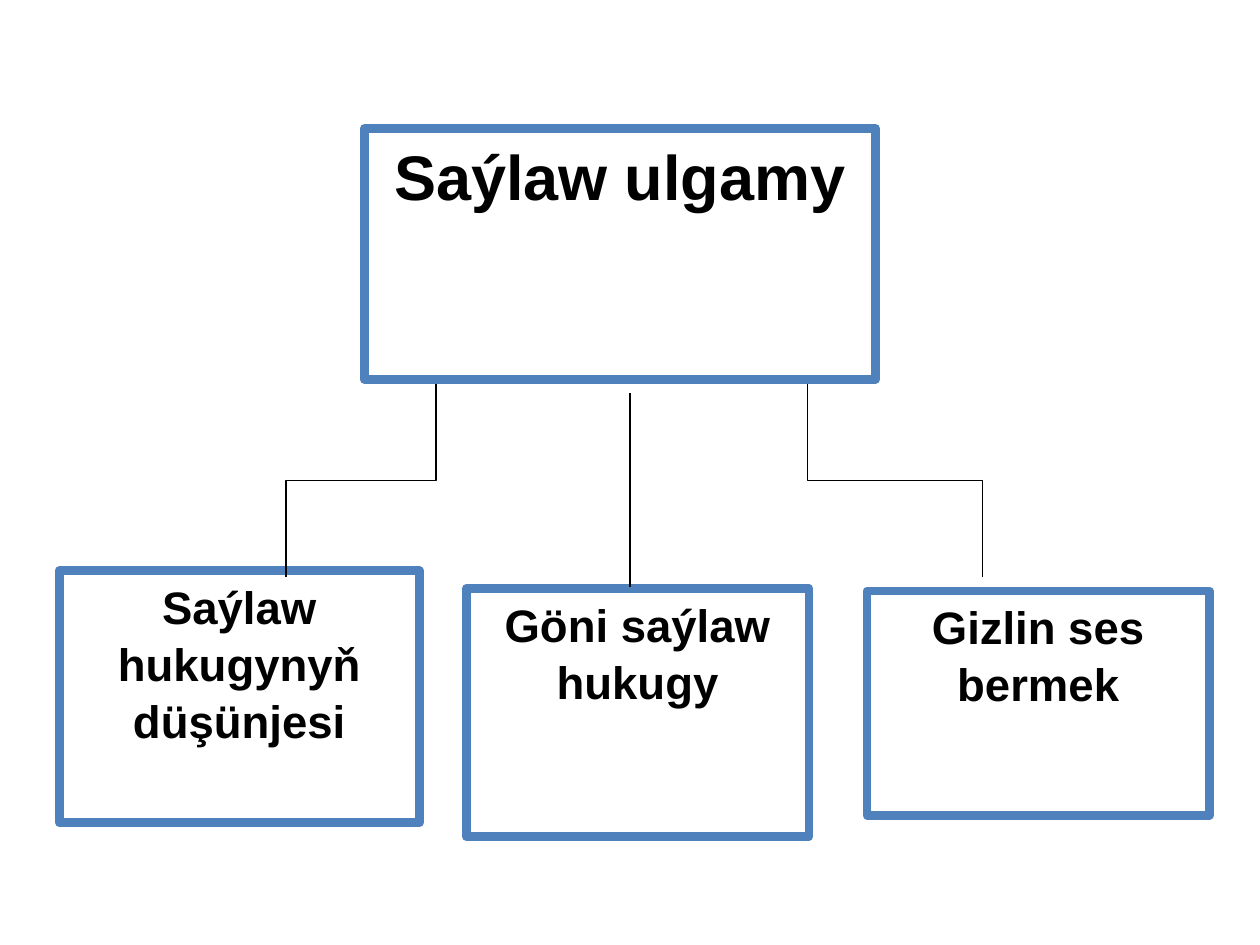
from lxml.etree import SubElement
from pptx import Presentation
from pptx.dml.color import RGBColor
from pptx.enum.shapes import MSO_CONNECTOR, MSO_SHAPE
from pptx.enum.text import MSO_ANCHOR, MSO_AUTO_SIZE, PP_ALIGN
from pptx.oxml.ns import qn
from pptx.util import Inches, Pt

WHITE = RGBColor(0xFF, 0xFF, 0xFF)
BLACK = RGBColor(0x00, 0x00, 0x00)
BLUE = RGBColor(0x4F, 0x81, 0xBD)


def write_box(sp, text, size, font="Arial", color=BLACK, bold=True):
    """Give a shape the outlined box style and top-centred text."""
    sp.fill.solid()
    sp.fill.fore_color.rgb = WHITE
    sp.line.color.rgb = BLUE
    sp.line.width = Pt(5)
    tf = sp.text_frame
    tf.word_wrap = True
    tf.auto_size = MSO_AUTO_SIZE.NONE
    tf.vertical_anchor = MSO_ANCHOR.TOP
    p = tf.paragraphs[0]
    p.alignment = PP_ALIGN.CENTER
    p.line_spacing = 1.04
    r = p.add_run()
    r.text = text
    r.font.name = font
    r.font.size = Pt(size)
    r.font.bold = bold
    r.font.color.rgb = color


def add_line(kind, x1, y1, x2, y2, rotation=0):
    line = s.shapes.add_connector(kind, *map(Inches, (x1, y1, x2, y2)))
    line.line.color.rgb = BLACK
    line.line.width = Pt(0.75)
    sp_pr = line._element.spPr
    SubElement(sp_pr, qn("a:effectLst"))
    if rotation:
        sp_pr.find(qn("a:xfrm")).set("rot", str(rotation * 60000))


prs = Presentation()
prs.slide_width, prs.slide_height = Inches(10), Inches(7.5)
s = prs.slides.add_slide(prs.slide_layouts[5])
s.background.fill.solid()
s.background.fill.fore_color.rgb = WHITE

title = s.shapes.title
title.left, title.top, title.width, title.height = map(Inches, (2.89, 1.02, 4.06, 1.99))
write_box(title, "Saýlaw ulgamy", 36)

branches = [
    ("Saýlaw hukugynyň düşünjesi", 0.47, 4.53, 2.86, 2),
    ("Göni saýlaw hukugy", 3.7, 4.67, 2.72, 1.97),
    ("Gizlin ses bermek", 6.88, 4.69, 2.72, 1.78),
]
for text, *place in branches:
    sp = s.shapes.add_shape(MSO_SHAPE.RECTANGLE, *map(Inches, place))
    sp.shadow.inherit = False
    write_box(sp, text, 26)

# An elbow leaves sideways, so each one is laid out flat and turned upright.
top, bottom = 3.05, 4.58
drop, mid_y = bottom - top, (top + bottom) / 2
for branch_x, title_x in [(7.8, 6.41), (2.27, 3.46)]:
    on_right = branch_x > title_x
    mid_x, run = (branch_x + title_x) / 2, abs(branch_x - title_x)
    half = drop / 2 if on_right else -drop / 2
    add_line(MSO_CONNECTOR.ELBOW, mid_x + half, mid_y - run / 2,
             mid_x - half, mid_y + run / 2, rotation=90 if on_right else 270)
add_line(MSO_CONNECTOR.STRAIGHT, 5, 3.12, 5, 4.66)

prs.save("out.pptx")
